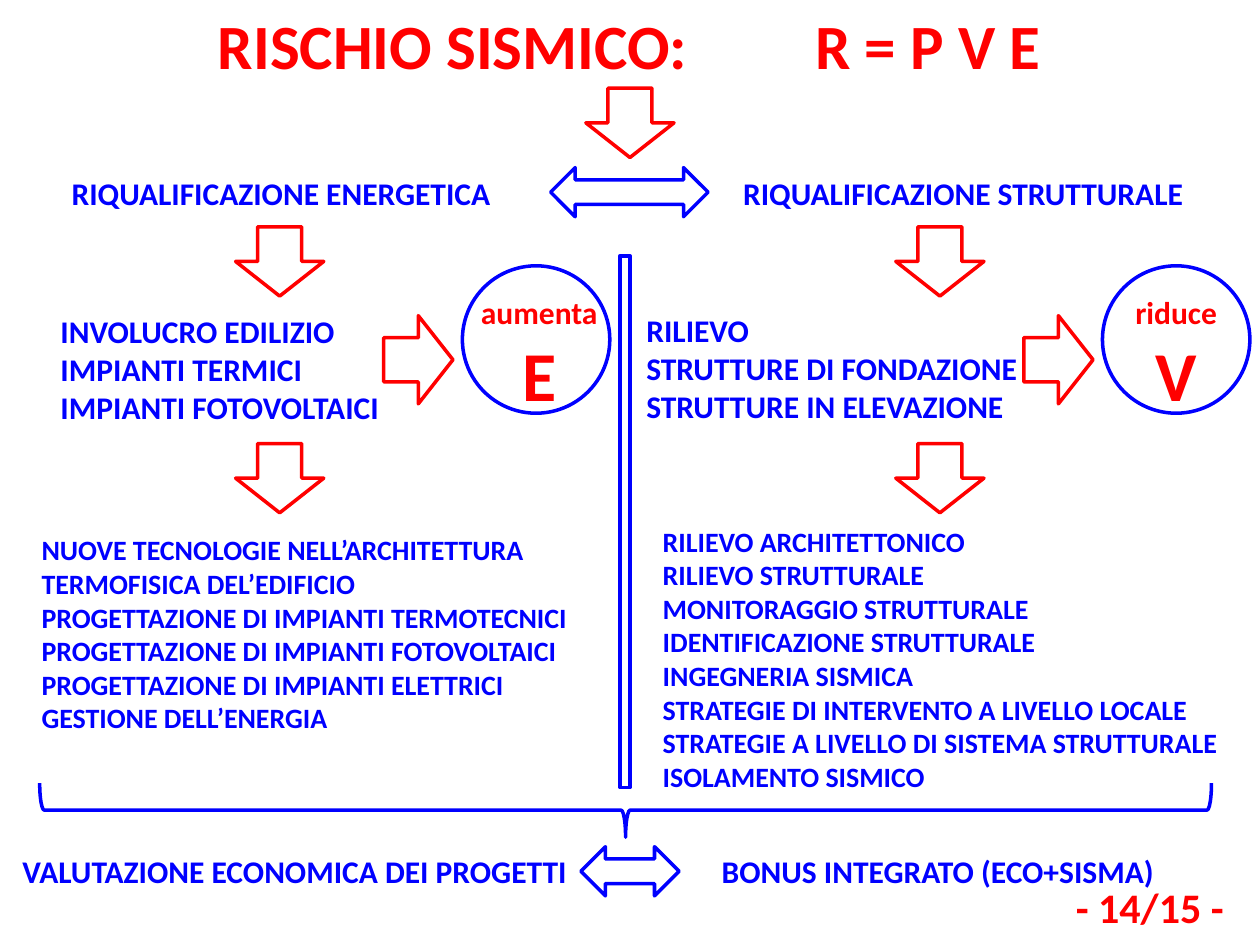
from dataclasses import dataclass

import pptx
import pptx.dml.color
import pptx.enum.shapes
import pptx.enum.text
import pptx.util
from lxml import etree
from pptx.util import Inches

RED = "FF0000"
BLUE = "0000FF"
SHAPES = pptx.enum.shapes.MSO_SHAPE
ALIGN = pptx.enum.text.PP_ALIGN
DRAWING = "{http://schemas.openxmlformats.org/drawingml/2006/main}"


@dataclass
class Box:
    left: float
    top: float
    width: float
    height: float


@dataclass
class Label:
    text: str
    box: Box
    color: str = BLUE
    sizes: tuple = (18,)
    align: ALIGN = ALIGN.LEFT
    wrap: bool = False


@dataclass
class BodyList:
    placeholder: int
    box: Box
    size: float
    items: tuple


@dataclass
class Outline:
    kind: SHAPES
    box: Box
    color: str = BLUE
    rotation: float = 0


def color_of(value: str) -> pptx.dml.color.RGBColor:
    return pptx.dml.color.RGBColor.from_string(value)


def place(shape, box: Box) -> None:
    shape.left, shape.top = Inches(box.left), Inches(box.top)
    shape.width, shape.height = Inches(box.width), Inches(box.height)


def write_text(shape, label: Label) -> None:
    frame = shape.text_frame
    frame.text = label.text
    frame.word_wrap = label.wrap
    frame.auto_size = pptx.enum.text.MSO_AUTO_SIZE.SHAPE_TO_FIT_TEXT
    frame.vertical_anchor = pptx.enum.text.MSO_ANCHOR.TOP
    for index, paragraph in enumerate(frame.paragraphs):
        paragraph.alignment = label.align
        paragraph.space_before = pptx.util.Pt(0)
        for run in paragraph.runs:
            run.font.name = "Calibri"
            run.font.size = pptx.util.Pt(label.sizes[min(index, len(label.sizes) - 1)])
            run.font.bold = True
            run.font.color.rgb = color_of(label.color)
    place(shape, label.box)


def add_label(slide, label: Label) -> None:
    box = label.box
    shape = slide.shapes.add_textbox(
        Inches(box.left), Inches(box.top), Inches(box.width), Inches(box.height)
    )
    write_text(shape, label)


def fill_title(slide) -> None:
    title = slide.shapes.title
    write_text(title, Label("RISCHIO SISMICO:\tR = P V E", Box(0.23, 0, 9.53, 0.71),
                            RED, (36,), wrap=True))
    title.text_frame.margin_left = Inches(1.5)
    properties = title.text_frame.paragraphs[0]._p.get_or_add_pPr()
    tabs = etree.SubElement(properties, DRAWING + "tabLst")
    etree.SubElement(tabs, DRAWING + "tab", pos=str(Inches(4.74)), algn="l")


def fill_list(slide, body: BodyList) -> None:
    shape = slide.placeholders[body.placeholder]
    write_text(shape, Label("\n".join(body.items), body.box, sizes=(body.size,)))
    for paragraph in shape.text_frame.paragraphs:
        properties = paragraph._p.get_or_add_pPr()
        properties.set("marL", "0")
        properties.set("indent", "0")
        etree.SubElement(properties, DRAWING + "buNone")


def add_outline(slide, outline: Outline) -> None:
    box = outline.box
    shape = slide.shapes.add_shape(
        outline.kind, Inches(box.left), Inches(box.top), Inches(box.width), Inches(box.height)
    )
    shape.rotation = outline.rotation
    shape.shadow.inherit = False
    shape.fill.background()
    shape.line.color.rgb = color_of(outline.color)
    shape.line.width = pptx.util.Pt(2)


def arrow(left: float, top: float, rotation: float = 0) -> Outline:
    return Outline(SHAPES.DOWN_ARROW, Box(left, top, 0.7, 0.55), RED, rotation)


LISTS = (
    BodyList(1, Box(0.38, 2.43, 2.75, 1.01), 18, (
        "INVOLUCRO EDILIZIO",
        "IMPIANTI TERMICI",
        "IMPIANTI FOTOVOLTAICI",
    )),
    BodyList(2, Box(0.23, 4.18, 4.42, 1.78), 16, (
        "NUOVE TECNOLOGIE NELL’ARCHITETTURA",
        "TERMOFISICA DEL’EDIFICIO",
        "PROGETTAZIONE DI IMPIANTI TERMOTECNICI",
        "PROGETTAZIONE DI IMPIANTI FOTOVOLTAICI",
        "PROGETTAZIONE DI IMPIANTI ELETTRICI",
        "GESTIONE DELL’ENERGIA",
    )),
    BodyList(3, Box(5.03, 2.42, 3.18, 1.01), 18, (
        "RILIEVO",
        "STRUTTURE DI FONDAZIONE",
        "STRUTTURE IN ELEVAZIONE",
    )),
    BodyList(4, Box(5.16, 4.11, 4.67, 2.26), 16, (
        "RILIEVO ARCHITETTONICO",
        "RILIEVO STRUTTURALE",
        "MONITORAGGIO STRUTTURALE",
        "IDENTIFICAZIONE STRUTTURALE",
        "INGEGNERIA SISMICA",
        "STRATEGIE DI INTERVENTO A LIVELLO LOCALE",
        "STRATEGIE A LIVELLO DI SISTEMA STRUTTURALE",
        "ISOLAMENTO SISMICO",
    )),
)

LABELS = (
    Label("RIQUALIFICAZIONE ENERGETICA", Box(0.47, 1.33, 3.55, 0.4)),
    Label("RIQUALIFICAZIONE STRUTTURALE", Box(5.8, 1.33, 3.73, 0.4)),
    Label("aumenta\nE", Box(3.71, 2.28, 1.14, 1.08), RED, (18, 40), ALIGN.CENTER),
    Label("riduce\nV", Box(8.91, 2.28, 0.85, 1.08), RED, (18, 40), ALIGN.CENTER),
    Label("VALUTAZIONE ECONOMICA DEI PROGETTI", Box(0.08, 6.71, 4.62, 0.4)),
    Label("BONUS INTEGRATO (ECO+SISMA)", Box(5.63, 6.71, 3.66, 0.4)),
    Label("- 14/15 -", Box(8.44, 6.95, 1.48, 0.5), RED, (24,), wrap=True),
)

OUTLINES = (
    arrow(4.65, 0.7),
    *(arrow(left, top) for left in (1.87, 7.11) for top in (1.8, 3.52)),
    *(arrow(left, 2.58, 270) for left in (2.97, 8.05)),
    *(Outline(SHAPES.OVAL, Box(left, 2.11, 1.17, 1.17)) for left in (3.67, 8.75)),
    Outline(SHAPES.LEFT_RIGHT_ARROW, Box(4.37, 1.33, 1.25, 0.39)),
    Outline(SHAPES.LEFT_RIGHT_ARROW, Box(4.61, 6.72, 0.78, 0.39)),
    Outline(SHAPES.RECTANGLE, Box(4.92, 2.03, 0.08, 4.22)),
    Outline(SHAPES.RIGHT_BRACE, Box(4.75, 1.78, 0.43, 9.3), rotation=90),
)


def main() -> None:
    presentation = pptx.Presentation()
    presentation.slide_width = Inches(10)
    presentation.slide_height = Inches(7.5)
    slide = presentation.slides.add_slide(presentation.slide_layouts.get_by_name("Comparison"))
    fill_title(slide)
    for body in LISTS:
        fill_list(slide, body)
    for label in LABELS:
        add_label(slide, label)
    for outline in OUTLINES:
        add_outline(slide, outline)
    presentation.save("out.pptx")


if __name__ == "__main__":
    main()
